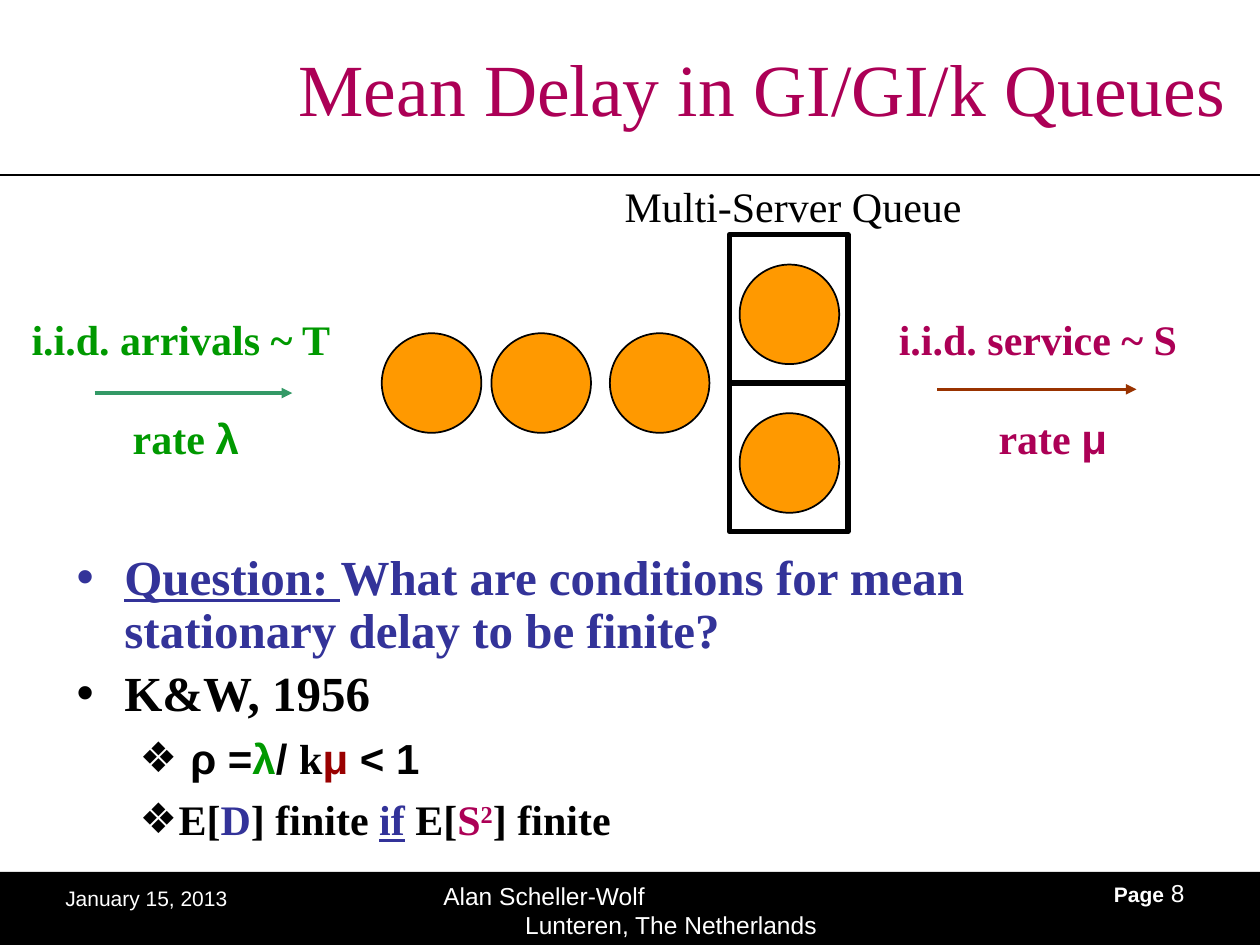
from lxml.etree import SubElement
from pptx import Presentation
from pptx.dml.color import RGBColor
from pptx.enum.shapes import MSO_CONNECTOR as CONN, MSO_SHAPE as SHAPE
from pptx.enum.text import MSO_ANCHOR as ANCHOR, PP_ALIGN as ALIGN
from pptx.oxml.ns import qn
from pptx.util import Inches, Pt

SERIF, SANS = "Times New Roman", "Arial"
BLACK, WHITE, ORANGE = "000000", "FFFFFF", "FF9900"
MAGENTA, GREEN, BLUE, RED = "AC0056", "009900", "333399", "990000"
COLS, ROWS = 100, 75


def rgb(value):
    return RGBColor.from_string(value)


class Deck:
    """Holds the style and current slide; lengths are grid columns and rows."""

    def __init__(self):
        self.prs = Presentation()
        self.prs.slide_width, self.prs.slide_height = Inches(10), Inches(7.5)
        self.s = self.prs.slides.add_slide(self.prs.slide_layouts[5])

    def x(self, cols):
        return int(self.prs.slide_width * cols / COLS)

    def y(self, rows):
        return int(self.prs.slide_height * rows / ROWS)

    def box(self, left, top, width, height):
        return self.x(left), self.y(top), self.x(width), self.y(height)

    def title(self, text, *at):
        sp = self.s.shapes.title
        sp.left, sp.top, sp.width, sp.height = self.box(*at)
        tf = sp.text_frame
        tf.vertical_anchor = ANCHOR.MIDDLE
        self.runs(tf.paragraphs[0], [(text, MAGENTA)], 42, align=ALIGN.CENTER)

    def shape(self, kind, *at, fill=None, line=None, weight=1):
        sp = self.s.shapes.add_shape(kind, *self.box(*at))
        sp.shadow.inherit = False
        if fill:
            sp.fill.solid()
            sp.fill.fore_color.rgb = rgb(fill)
        else:
            sp.fill.background()
        if line:
            sp.line.color.rgb = rgb(line)
            sp.line.width = Pt(weight)
        else:
            sp.line.fill.background()

    def line(self, left, right, row, color, weight, arrow=False):
        c = self.s.shapes.add_connector(
            CONN.STRAIGHT, self.x(left), self.y(row), self.x(right), self.y(row))
        c.line.color.rgb = rgb(color)
        c.line.width = Pt(weight)
        if arrow:
            SubElement(c.line._get_or_add_ln(), qn("a:tailEnd"), type="triangle")
        SubElement(c._element.spPr, qn("a:effectLst"))

    def text(self, *at, wrap=True):
        tf = self.s.shapes.add_textbox(*self.box(*at)).text_frame
        tf.word_wrap = wrap
        return tf

    def runs(self, p, runs, size, font=SERIF, bold=False, align=ALIGN.LEFT):
        """Each run is (text, colour[, overrides])."""
        p.alignment = align
        for text, color, *extra in runs:
            style = extra[0] if extra else {}
            r = p.add_run()
            r.text = text
            r.font.name = style.get("font", font)
            r.font.size = Pt(size)
            r.font.bold = bold
            r.font.underline = style.get("underline", False)
            r.font.color.rgb = rgb(color)
            if style.get("superscript"):
                r._r.get_or_add_rPr().set("baseline", "30000")

    def indent(self, p, margin, first=0):
        pPr = p._p.get_or_add_pPr()
        pPr.set("marL", str(self.x(margin)))
        pPr.set("indent", str(self.x(first)))
        return pPr

    def bullets(self, items, *at):
        """Each item is (level, size, runs)."""
        tf = self.text(*at)
        levels = [("•", 3.8, -3.8), ("❖", 8.1, -3.1)]
        for i, (level, size, runs) in enumerate(items):
            p = tf.add_paragraph() if i else tf.paragraphs[0]
            char, margin, first = levels[level]
            pPr = self.indent(p, margin, first)
            SubElement(pPr, qn("a:buFont"), typeface=SANS)
            SubElement(pPr, qn("a:buChar"), char=char)
            p.level = level
            p.line_spacing = 1.0 if level else 0.9
            p.space_before = Pt(6 if i else 0)
            self.runs(p, runs, size, bold=True)

    def flow(self, label, symbol, color, at, arrow, arrow_color, shift=0):
        """An arrow with its process named above and its rate below."""
        self.line(*arrow, arrow_color, 2, arrow=True)
        tf = self.text(*at, wrap=False)
        self.runs(tf.paragraphs[0], [(label, color)], 24, bold=True, align=ALIGN.CENTER)
        p = tf.add_paragraph()
        p.space_before = Pt(27.6)
        self.indent(p, shift)
        self.runs(p, [("rate ", color), (symbol, color, {"font": SANS})], 24,
                  bold=True, align=ALIGN.CENTER)


def footer(deck):
    deck.shape(SHAPE.RECTANGLE, 0, 69.2, COLS, 5.8, fill=BLACK)
    p = deck.text(4.2, 69.8, 23.3, 5.2).paragraphs[0]
    deck.runs(p, [("January 15, 2013", WHITE)], 12, SANS)

    p = deck.text(34.2, 69.4, 31.7, 5.2).paragraphs[0]
    deck.indent(p, 6.5, -6.5)
    deck.runs(p, [("Alan Scheller-Wolf", WHITE)], 14, SANS)
    p.add_line_break()
    deck.runs(p, [("Lunteren, The Netherlands", WHITE)], 14, SANS)

    p = deck.text(71.7, 69.2, 23.3, 5.2).paragraphs[0]
    deck.runs(p, [("Page", WHITE)], 12, SANS, bold=True, align=ALIGN.RIGHT)
    deck.runs(p, [(" 8", WHITE)], 14, SANS, align=ALIGN.RIGHT)


def queue(deck):
    size, server_w, server_h, top = 7.9, 9.4, 11.8, 18.6
    middle = top + server_h
    for left in (30.3, 39, 48.4):
        deck.shape(SHAPE.OVAL, left, middle - size / 2, size, size,
                   fill=ORANGE, line=BLACK)
    for server_top in (top, middle):
        deck.shape(SHAPE.OVAL, 58.7, server_top + 2.4, size, size,
                   fill=ORANGE, line=BLACK)
        deck.shape(SHAPE.RECTANGLE, 57.9, server_top, server_w, server_h,
                   line=BLACK, weight=3)
    p = deck.text(48, 13.8, 29.9, 5, wrap=False).paragraphs[0]
    deck.runs(p, [("Multi-Server Queue", BLACK)], 24, align=ALIGN.CENTER)
    deck.flow("i.i.d. arrivals ~ T ", "λ", GREEN, (1.4, 24.4, 26.7, 13.1),
              (7.5, 23.2, 31.2), "339966")
    deck.flow("i.i.d. service ~ S ", "μ", MAGENTA, (70.2, 24.4, 25.2, 13.1),
              (74.4, 90.2, 30.9), "993300", shift=1.5)


def main():
    deck = Deck()
    footer(deck)
    deck.line(0, COLS, 13.9, BLACK, 1.5)
    deck.title("Mean Delay in GI/GI/k Queues ", 22.4, 1.6, 77.6, 10.7)
    queue(deck)
    sans, underline = {"font": SANS}, {"underline": True}
    deck.bullets([
        (0, 28, [("Question: ", BLUE, underline),
                 ("What are conditions for mean stationary delay to be finite?", BLUE)]),
        (0, 28, [("K&W, 1956", BLACK)]),
        (1, 24, [(" ρ =", BLACK, sans), ("λ", GREEN, sans), ("/ ", BLACK, sans),
                 ("k", BLACK), ("μ", RED, sans), (" < 1", BLACK, sans)]),
        (1, 24, [("E[", BLACK), ("D", BLUE), ("] finite ", BLACK),
                 ("if", BLUE, underline), (" E[", BLACK), ("S", MAGENTA),
                 ("2", MAGENTA, {"superscript": True}), ("] finite", BLACK)]),
    ], 5.1, 43.4, 75, 25)
    deck.prs.save("out.pptx")


if __name__ == "__main__":
    main()
